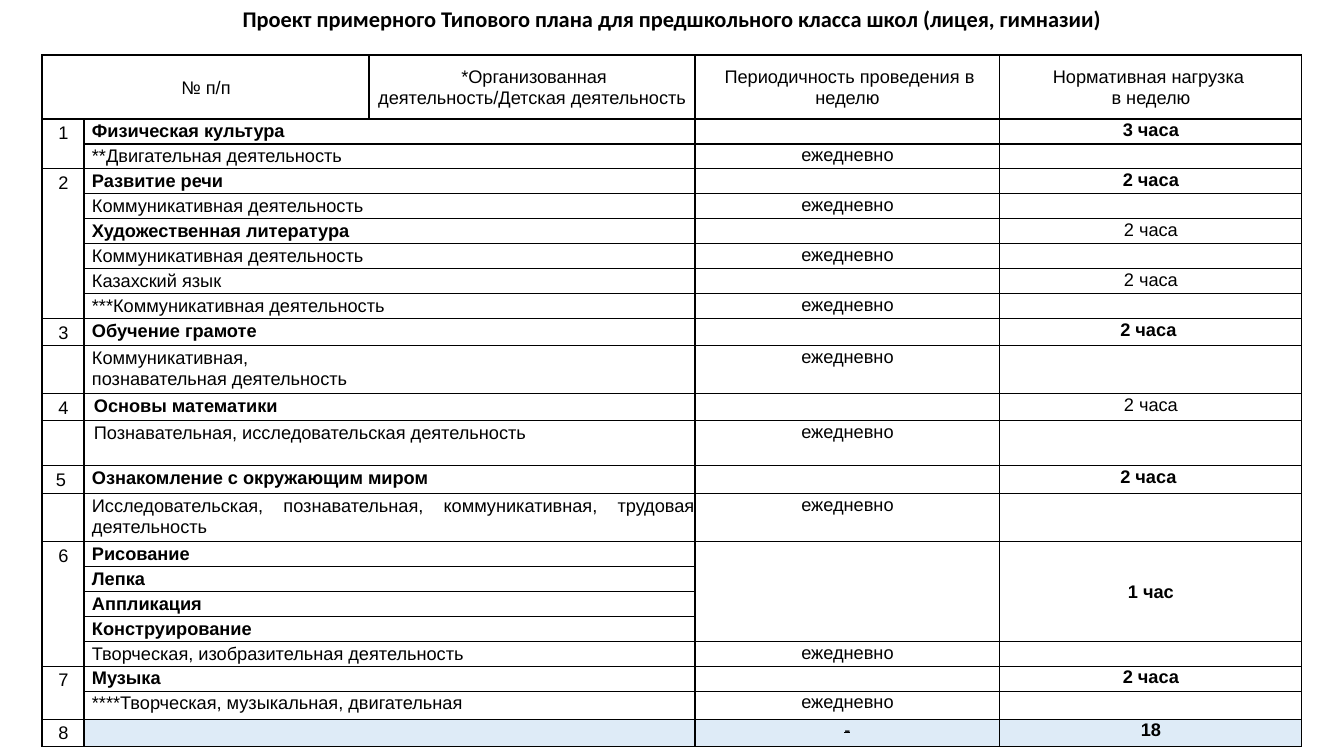
from dataclasses import dataclass

from lxml.etree import SubElement
from pptx import Presentation
from pptx.dml.color import RGBColor
from pptx.enum.text import MSO_ANCHOR as Anchor, MSO_AUTO_SIZE as AutoSize, PP_ALIGN as Align
from pptx.oxml.ns import qn
from pptx.util import Pt

EMU_PER_PX = 914400 / 100.8


@dataclass(frozen=True)
class Theme:
    black: str = "000000"
    white: str = "FFFFFF"
    total: str = "DEEBF7"
    title_font: str = "Calibri"
    table_font: str = "Arial"
    title_size: int = 16
    table_size: int = 13
    border: int = 1


@dataclass(frozen=True)
class Row:
    height: int
    number: str = ""
    label: str = ""
    bold: bool = False
    frequency: str = ""
    load: str = ""
    load_bold: bool = False
    label_style: str = "label"


THEME = Theme()
DAILY = "ежедневно"
TITLE = "Проект примерного Типового плана для предшкольного класса школ (лицея, гимназии)"
COLUMNS = [42, 285, 326, 305, 302]
HEADER_HEIGHT = 64
HEADERS = {
    0: ("№ п/п", "number"),
    2: ("*Организованная деятельность/Детская деятельность", "header"),
    3: ("Периодичность проведения в неделю", "header"),
    4: ("Нормативная нагрузка \nв неделю", "middle"),
}
ROWS = [
    Row(24, "1", "Физическая культура ", True, "", "3 часа", True),
    Row(24, "", "**Двигательная деятельность", False, DAILY),
    Row(24, "2", "Развитие речи ", True, "", "2 часа", True),
    Row(24, "", "Коммуникативная деятельность", False, DAILY),
    Row(25, "", "Художественная литература", True, "", "2 часа"),
    Row(24, "", "Коммуникативная деятельность", False, DAILY),
    Row(24, "", "Казахский язык ", False, "", "2 часа"),
    Row(25, "", "***Коммуникативная деятельность", False, DAILY),
    Row(26, "3", "Обучение грамоте", True, "", "2 часа ", True),
    Row(47, "", "Коммуникативная,\nпознавательная деятельность", False, DAILY),
    Row(27, "4", "Основы математики", True, "", "2 часа", False, "maths"),
    Row(45, "", "Познавательная, исследовательская деятельность", False, DAILY, label_style="maths"),
    Row(28, "5 ", "Ознакомление с окружающим миром", True, "", "2 часа ", True),
    Row(47, "", "Исследовательская, познавательная, коммуникативная, трудовая деятельность", False, DAILY),
    Row(24, "6", "Рисование ", True, "", "1 час", True),
    Row(25, "", "Лепка", True),
    Row(24, "", "Аппликация", True),
    Row(24, "", "Конструирование", True),
    Row(25, "", "Творческая, изобразительная деятельность", False, DAILY),
    Row(24, "7", "Музыка", True, "", "2 часа", True),
    Row(28, "", "****Творческая, музыкальная, двигательная", False, DAILY),
    Row(26, "8", "", False, "-", "18", True),
]
NUMBER_SPANS = [(1, 2), (3, 8), (15, 19), (20, 21)]
CREATIVE_SPAN = (15, 18)

PLAIN = {"alignment": Align.CENTER, "line_spacing": 1.05}
NARROW = {"margin_left": 1, "margin_right": 1, "margin_top": 1, "margin_bottom": 1}
WIDE = {"margin_left": 5, "margin_right": 5, "margin_top": 0, "margin_bottom": 0}
STYLES = {
    "number": (NARROW, {"alignment": Align.CENTER, "line_spacing": 1.15, "space_after": Pt(1)}, 1, 0),
    "label": (NARROW, {"alignment": Align.JUSTIFY, "line_spacing": 1.05}, 7, 0),
    "maths": (NARROW, {"alignment": Align.LEFT, "line_spacing": 1.07}, 9, 0),
    "header": (WIDE, PLAIN, 0, 4),
    "value": (WIDE, PLAIN, 0, 0),
    "middle": (WIDE, {"alignment": Align.CENTER, "line_spacing": 1.07}, 0, 0),
}


def px(length):
    return round(length * EMU_PER_PX)


def apply(target, values):
    for name, value in values.items():
        setattr(target, name, value)


def format_font(font, name, size, bold):
    apply(font, {"name": name, "size": Pt(size), "bold": bold})
    font.color.rgb = RGBColor.from_string(THEME.black)


def add_title(slide):
    title = slide.shapes.title
    apply(title, {"left": px(224), "top": px(0), "width": px(896), "height": px(37)})
    frame = title.text_frame
    apply(frame, {"word_wrap": True, "auto_size": AutoSize.SHAPE_TO_FIT_TEXT, "vertical_anchor": Anchor.TOP})
    frame.text = TITLE
    paragraph = frame.paragraphs[0]
    paragraph.alignment = Align.CENTER
    format_font(paragraph.runs[0].font, THEME.title_font, THEME.title_size, True)


def format_cell(cell, fill):
    properties = cell._tc.get_or_add_tcPr()
    for side in ("lnL", "lnR", "lnT", "lnB"):
        line = SubElement(properties, qn(f"a:{side}"), w=str(Pt(THEME.border)))
        SubElement(SubElement(line, qn("a:solidFill")), qn("a:srgbClr"), val=THEME.black)
    cell.fill.solid()
    cell.fill.fore_color.rgb = RGBColor.from_string(fill)


def write_cell(cell, text, style, bold=False, anchor=Anchor.TOP):
    margins, paragraph_format, left, indent = STYLES[style]
    apply(cell, {name: px(value) for name, value in margins.items()})
    cell.vertical_anchor = anchor
    cell.text = text
    for paragraph in cell.text_frame.paragraphs:
        apply(paragraph, paragraph_format)
        properties = paragraph._p.get_or_add_pPr()
        properties.set("marL", str(px(left)))
        properties.set("indent", str(px(indent)))
        for run in paragraph.runs:
            format_font(run.font, THEME.table_font, THEME.table_size, bold)
            if text == "-":
                run.font._element.set("strike", "sngStrike")
        SubElement(paragraph._p, qn("a:endParaRPr"), sz=str(THEME.table_size * 100))


def merge_cells(table):
    table.cell(0, 0).merge(table.cell(0, 1))
    for index in range(1, len(ROWS) + 1):
        table.cell(index, 1).merge(table.cell(index, 2))
    spans = [(0, span) for span in NUMBER_SPANS] + [(3, CREATIVE_SPAN), (4, CREATIVE_SPAN)]
    for column, (first, last) in spans:
        table.cell(first, column).merge(table.cell(last, column))


def add_plan_table(slide):
    heights = [HEADER_HEIGHT] + [row.height for row in ROWS]
    table = slide.shapes.add_table(
        len(heights), len(COLUMNS), px(42), px(55), px(sum(COLUMNS)), px(sum(heights))
    ).table
    apply(table, {"first_row": False, "horz_banding": False})
    for column, width in zip(table.columns, COLUMNS):
        column.width = px(width)
    for row, height in zip(table.rows, heights):
        row.height = px(height)
    merge_cells(table)
    for index in range(len(heights)):
        for column in range(len(COLUMNS)):
            is_total = index == len(ROWS) and column > 0
            format_cell(table.cell(index, column), THEME.total if is_total else THEME.white)
            write_cell(table.cell(index, column), "", "value") if index and column == 2 else None
    for column, (text, style) in HEADERS.items():
        write_cell(table.cell(0, column), text, style, anchor=Anchor.MIDDLE)
    for index, row in enumerate(ROWS, 1):
        is_creative = index == CREATIVE_SPAN[0]
        write_cell(table.cell(index, 0), row.number, "number")
        write_cell(table.cell(index, 1), row.label, row.label_style, row.bold)
        write_cell(table.cell(index, 3), row.frequency, "value")
        write_cell(
            table.cell(index, 4), row.load, "middle" if is_creative else "value",
            row.load_bold, Anchor.MIDDLE if is_creative else Anchor.TOP,
        )


def main():
    presentation = Presentation()
    apply(presentation, {"slide_width": px(1344), "slide_height": px(756)})
    slide = presentation.slides.add_slide(presentation.slide_layouts[5])
    add_title(slide)
    add_plan_table(slide)
    presentation.save("out.pptx")


if __name__ == "__main__":
    main()
